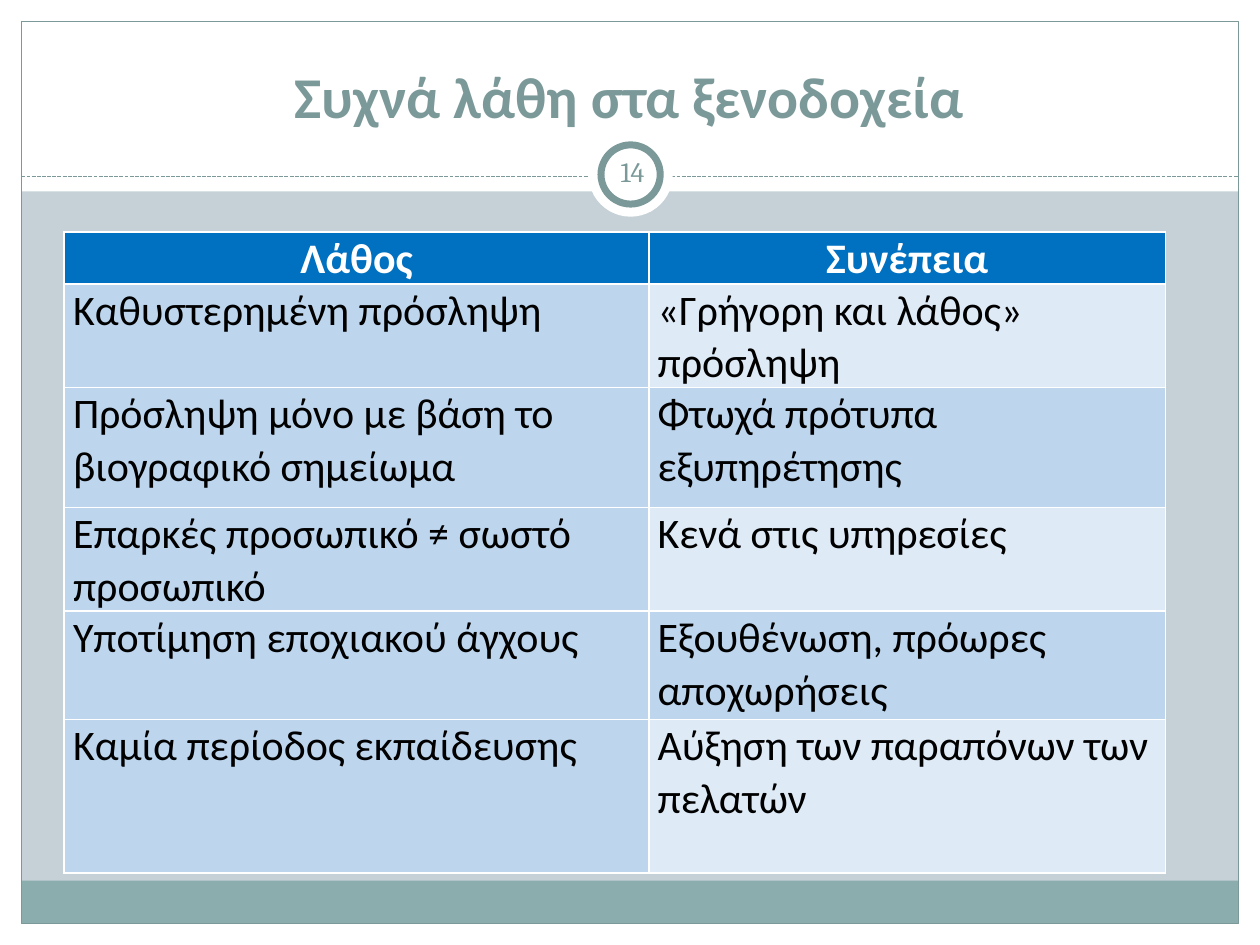
from lxml.etree import SubElement
from pptx import Presentation
from pptx.dml.color import RGBColor
from pptx.enum.dml import MSO_LINE
from pptx.enum.shapes import MSO_CONNECTOR, MSO_SHAPE
from pptx.enum.text import MSO_ANCHOR, PP_ALIGN
from pptx.oxml.ns import qn
from pptx.util import Inches, Pt

WIDTH, HEIGHT, MARGIN = 10, 7.5, 0.17
WHITE, BLACK = "FFFFFF", "000000"
BACKGROUND, ACCENT, FOOTER = "C5D1D7", "7C999A", "8CADAE"
HEADER_BLUE, MID_BLUE, LIGHT_BLUE = "0070C0", "BDD6EE", "DEEAF6"

ROWS = [
    ("Λάθος", "Συνέπεια"),
    ("Καθυστερημένη πρόσληψη", "«Γρήγορη και λάθος» πρόσληψη"),
    ("Πρόσληψη μόνο με βάση το βιογραφικό σημείωμα", "Φτωχά πρότυπα εξυπηρέτησης"),
    ("Επαρκές προσωπικό ≠ σωστό προσωπικό", "Κενά στις υπηρεσίες"),
    ("Υποτίμηση εποχιακού άγχους", "Εξουθένωση, πρόωρες αποχωρήσεις"),
    ("Καμία περίοδος εκπαίδευσης", "Αύξηση των παραπόνων των πελατών"),
]
COLUMN_WIDTHS = [4.64, 4.1]
ROW_HEIGHTS = [0.4, 0.81, 0.95, 0.81, 0.86, 1.22]


def color(value):
    """Turn a hex string into a colour."""
    return RGBColor.from_string(value)


def add_box(slide, kind, box, fill=None, line=None, line_width=0.75):
    """Add a preset shape with an optional fill and outline."""
    shape = slide.shapes.add_shape(kind, *map(Inches, box))
    shape.shadow.inherit = False
    if fill:
        shape.fill.solid()
        shape.fill.fore_color.rgb = color(fill)
    else:
        shape.fill.background()
    if line:
        shape.line.color.rgb = color(line)
        shape.line.width = Pt(line_width)
    else:
        shape.line.fill.background()


def format_paragraph(paragraph, font_name, size, font_color, bold=False, align=PP_ALIGN.CENTER):
    """Set the alignment and font of a paragraph."""
    paragraph.alignment = align
    for run in paragraph.runs:
        run.font.name = font_name
        run.font.size = Pt(size)
        run.font.bold = bold
        run.font.color.rgb = color(font_color)


def add_label(slide, box, text, font_name, size, anchor, bold=False):
    """Add a centred text box in the accent colour."""
    text_frame = slide.shapes.add_textbox(*map(Inches, box)).text_frame
    text_frame.word_wrap = True
    text_frame.vertical_anchor = anchor
    text_frame.margin_left = text_frame.margin_right = Inches(0.05)
    text_frame.text = text
    format_paragraph(text_frame.paragraphs[0], font_name, size, ACCENT, bold)


def add_frame(slide, width, height):
    """Draw the white margins, the footer band and the outline."""
    inner_width = width - 2 * MARGIN
    bands = [
        (0, height - MARGIN, width, MARGIN),
        (0, 0, width, 1.52),
        (0, 0, MARGIN, height),
        (width - MARGIN, 0, MARGIN, height),
    ]
    for band in bands:
        add_box(slide, MSO_SHAPE.RECTANGLE, band, WHITE)
    add_box(slide, MSO_SHAPE.RECTANGLE, (MARGIN, height - MARGIN - 0.34, inner_width, 0.34), FOOTER)
    add_box(slide, MSO_SHAPE.RECTANGLE, (MARGIN, MARGIN, inner_width, height - 2 * MARGIN), line=ACCENT)


def add_divider(slide, left, top, width):
    """Draw the dashed line under the title."""
    ends = (left, top, left + width, top)
    connector = slide.shapes.add_connector(MSO_CONNECTOR.STRAIGHT, *map(Inches, ends))
    connector.line.color.rgb = color(ACCENT)
    connector.line.width = Pt(0.75)
    connector.line.dash_style = MSO_LINE.SQUARE_DOT
    SubElement(connector.element.spPr, qn("a:effectLst"))


def add_number_badge(slide, left, top, size, number):
    """Draw the ringed slide number."""
    add_box(slide, MSO_SHAPE.OVAL, (left, top, size, size), WHITE)
    ring = (left + 0.1, top + 0.1, size - 0.2, size - 0.2)
    add_box(slide, MSO_SHAPE.OVAL, ring, WHITE, ACCENT, 4)
    add_label(slide, (left + 0.1, top + 0.07, 0.5, 0.48), number, "Cambria", 16, MSO_ANCHOR.MIDDLE)


def add_borders(cell, border_color):
    """Give a cell thin borders on all four sides."""
    properties = cell._tc.get_or_add_tcPr()
    for side in ("lnL", "lnR", "lnT", "lnB"):
        border = SubElement(properties, qn(f"a:{side}"), w=str(Pt(1)))
        fill = SubElement(border, qn("a:solidFill"))
        SubElement(fill, qn("a:srgbClr"), val=border_color)


def cell_fill(row, column):
    """Choose the fill of a cell from its place in the table."""
    if row == 0:
        return HEADER_BLUE
    return LIGHT_BLUE if column == 1 and row % 2 else MID_BLUE


def fill_cell(cell, text, fill, header):
    """Write and style one table cell."""
    add_borders(cell, WHITE)
    cell.fill.solid()
    cell.fill.fore_color.rgb = color(fill)
    cell.margin_left = cell.margin_right = Inches(0.07)
    cell.margin_top = cell.margin_bottom = 0
    cell.text = text
    paragraph = cell.text_frame.paragraphs[0]
    paragraph.line_spacing = 1.03
    align = PP_ALIGN.CENTER if header else PP_ALIGN.LEFT
    format_paragraph(paragraph, "Calibri", 24, WHITE if header else BLACK, header, align)


def add_mistakes_table(slide, left, top):
    """Add the table of mistakes and consequences."""
    box = (left, top, sum(COLUMN_WIDTHS), sum(ROW_HEIGHTS))
    table = slide.shapes.add_table(len(ROWS), len(COLUMN_WIDTHS), *map(Inches, box)).table
    for column, width in zip(table.columns, COLUMN_WIDTHS):
        column.width = Inches(width)
    for row, height in zip(table.rows, ROW_HEIGHTS):
        row.height = Inches(height)
    for row, texts in enumerate(ROWS):
        for column, text in enumerate(texts):
            fill_cell(table.cell(row, column), text, cell_fill(row, column), row == 0)


def main():
    """Build and save the slide."""
    presentation = Presentation()
    presentation.slide_width = Inches(WIDTH)
    presentation.slide_height = Inches(HEIGHT)
    slide = presentation.slides.add_slide(presentation.slide_layouts[6])
    slide.background.fill.solid()
    slide.background.fill.fore_color.rgb = color(BACKGROUND)
    add_frame(slide, WIDTH, HEIGHT)
    add_divider(slide, MARGIN, 1.4, WIDTH - 2 * MARGIN)
    add_label(slide, (0.33, 0.25, 9.33, 0.83), "Συχνά λάθη στα ξενοδοχεία", "Calibri", 33,
              MSO_ANCHOR.BOTTOM, bold=True)
    add_number_badge(slide, 4.67, 1.05, 0.67, "14")
    add_mistakes_table(slide, 0.51, 1.84)
    presentation.save("out.pptx")


if __name__ == "__main__":
    main()
